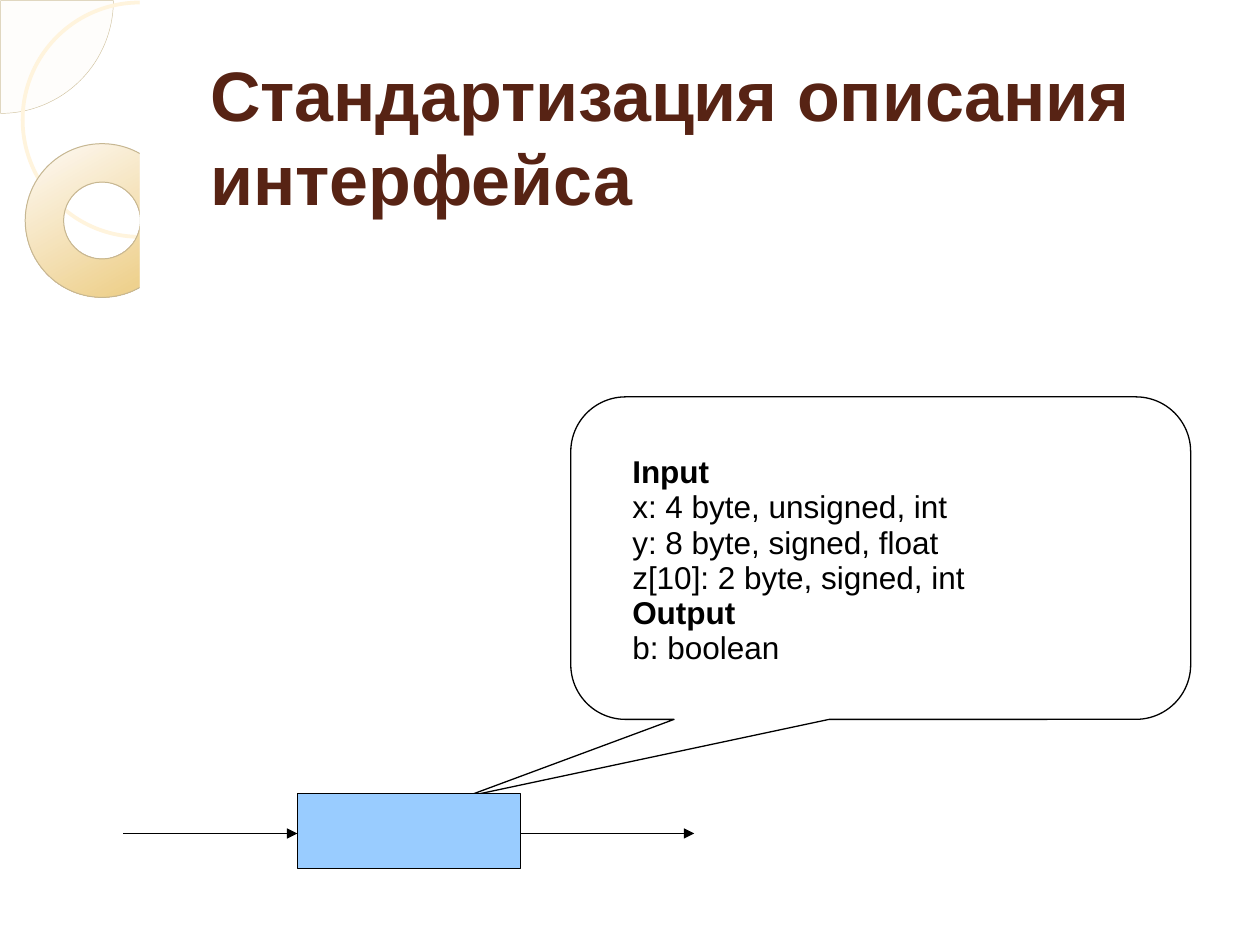
import pptx
import pptx.util
import pptx.dml.color
import pptx.enum.shapes
import pptx.oxml
import pptx.oxml.ns
from lxml import etree

Inches = pptx.util.Inches
Pt = pptx.util.Pt
SHAPE = pptx.enum.shapes.MSO_SHAPE
qn = pptx.oxml.ns.qn


def color(value):
    return pptx.dml.color.RGBColor.from_string(value)


def add_box(s, kind, box, fill=None, line=None, width=0.75, adj=()):
    sp = s.shapes.add_shape(kind, *map(Inches, box))
    sp.shadow.inherit = False
    for i, value in enumerate(adj):
        sp.adjustments[i] = value
    if fill:
        sp.fill.solid()
        sp.fill.fore_color.rgb = color(fill)
    else:
        sp.fill.background()
    if line:
        sp.line.color.rgb = color(line)
        sp.line.width = Pt(width)
    else:
        sp.line.fill.background()
    return sp


def add_text(s, box, lines, spacing, top_inset, **base):
    sp = s.shapes.add_textbox(*map(Inches, box))
    tf = sp.text_frame
    frame = {"word_wrap": True, "margin_left": Inches(0.1), "margin_right": Inches(0.1),
             "margin_top": Inches(top_inset), "margin_bottom": Inches(0.05)}
    for name, value in frame.items():
        setattr(tf, name, value)
    for i, (text, bold) in enumerate(lines):
        p = tf.paragraphs[0] if i == 0 else tf.add_paragraph()
        p.line_spacing = Pt(spacing)
        r = p.add_run()
        r.text = text
        for name, value in {"name": "Arial", "bold": bold, "size": Pt(base["size"])}.items():
            setattr(r.font, name, value)
        r.font.color.rgb = color(base["ink"])


def add_arrow(s, x1, x2, y):
    line = s.shapes.add_connector(pptx.enum.shapes.MSO_CONNECTOR.STRAIGHT,
                                  *map(Inches, (x1, y, x2, y)))
    line.line.color.rgb = color("000000")
    line.line.width = Pt(0.75)
    etree.SubElement(line.line._get_or_add_ln(), qn("a:tailEnd"), type="triangle")
    etree.SubElement(line._element.spPr, qn("a:effectLst"))


def add_decoration(s, x, y):
    pie = add_box(s, SHAPE.PIE, (x - 0.89, y - 0.89, 1.79, 1.79), "FCFAF4", "D1C3A0", 0.25,
                  adj=(0, 54))
    tint = pie._element.spPr.find(qn("a:solidFill"))[0]
    etree.SubElement(tint, qn("a:alpha"), val="33000")
    add_box(s, SHAPE.OVAL, (x + 0.18, y + 0.02, 1.86, 1.86), None, "FFF4DD", 2.15)
    ring = add_box(s, SHAPE.DONUT, (x + 0.2, y + 1.14, 1.22, 1.22), None, "C6B792", 0.57,
                   adj=(0.25,))
    ring.fill.gradient()
    ring.fill.gradient_angle = 300
    for stop, (position, value) in zip(ring.fill.gradient_stops,
                                       ((0, "FEFAF6"), (0.85, "EED18E"))):
        stop.position = position
        stop.color.rgb = color(value)
    for width in (8.89, 0.08):
        add_box(s, SHAPE.RECTANGLE, (x + 1.11, y, width, 7.5), "FFFFFF")


def add_module(s, x, y, w, h):
    arrow = 1.38
    middle = y + h / 2 + 0.02
    add_arrow(s, x - arrow, x, middle)
    add_arrow(s, x + w, x + w + arrow, middle)


def add_interface(s, x, y, w, h, module):
    add_box(s, SHAPE.ROUNDED_RECTANGULAR_CALLOUT, (x, y, w, h), "FFFFFF", "000000",
            adj=(-0.67, 0.74, 0.17))
    add_box(s, SHAPE.ROUNDED_RECTANGLE, module, "99CCFF", "000000", adj=(0,))
    lines = [
        ("Input", True),
        ("x: 4 byte, unsigned, int", False),
        ("y: 8 byte, signed, float", False),
        ("z[10]: 2 byte, signed, int", False),
        ("Output", True),
        ("b: boolean", False),
    ]
    add_text(s, (x + 0.39, y + 0.39, 4.13, 1.8), lines, 20.1, 0.07, size=18, ink="000000")


def main():
    prs = pptx.Presentation()
    prs.slide_width, prs.slide_height = Inches(10), Inches(7.5)
    s = prs.slides.add_slide(prs.slide_layouts[6])
    module = (2.36, 6.3, 1.77, 0.59)
    add_decoration(s, 0, 0)
    add_text(s, (1.57, 0.3, 8.2, 1.86), [("Стандартизация описания интерфейса", True)],
             48, 0.11, size=40, ink="572314")
    add_module(s, *module)
    add_interface(s, 4.53, 3.15, 4.92, 2.56, module)
    prs.save("out.pptx")


if __name__ == "__main__":
    main()
